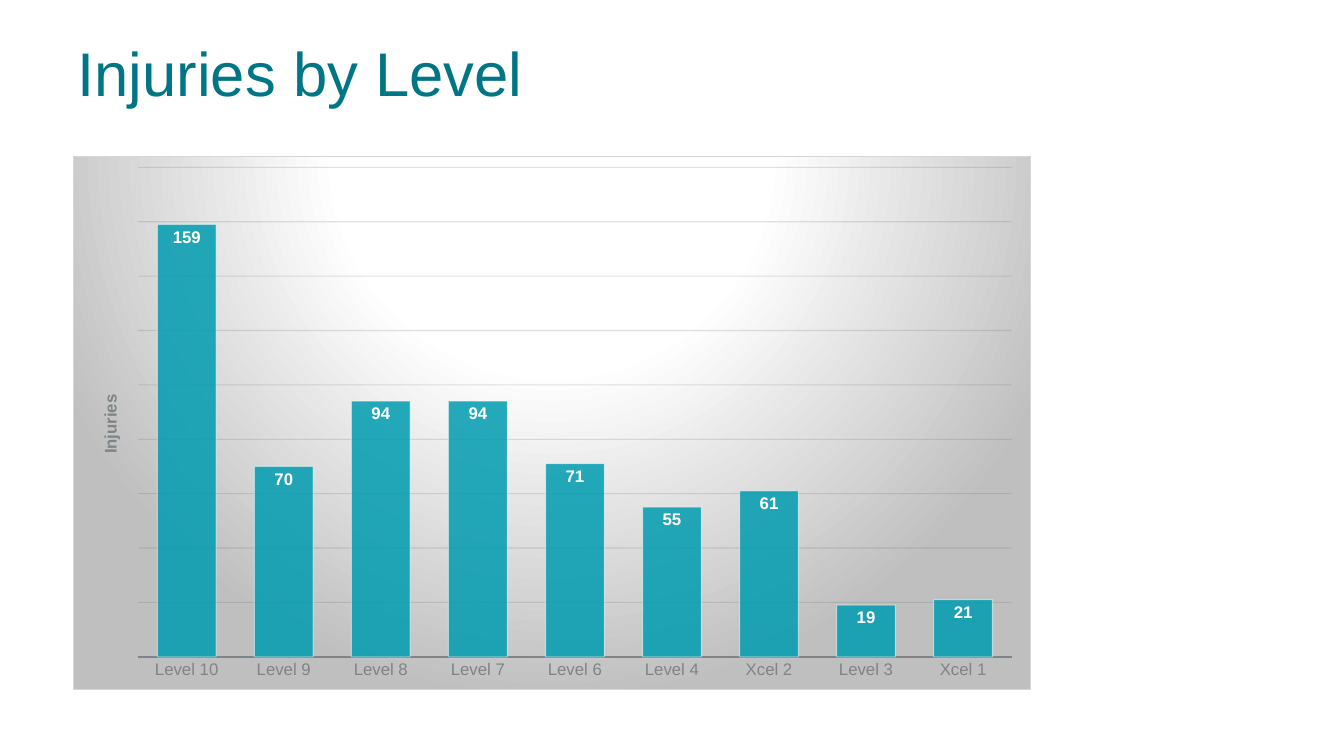
from lxml.etree import SubElement
from pptx import Presentation
from pptx.chart.data import CategoryChartData
from pptx.dml.color import RGBColor
from pptx.enum.chart import XL_CHART_TYPE as ChartType
from pptx.enum.chart import XL_LABEL_POSITION as LabelPosition
from pptx.enum.chart import XL_TICK_LABEL_POSITION as TickLabels
from pptx.enum.chart import XL_TICK_MARK as TickMark
from pptx.enum.text import MSO_ANCHOR
from pptx.oxml import parse_xml
from pptx.oxml.ns import nsdecls, qn
from pptx.util import Inches, Pt

# Content
TITLE = "Injuries by Level"
AXIS_TITLE = "Injuries"
INJURIES = {
    "Level 10": 159, "Level 9": 70, "Level 8": 94, "Level 7": 94, "Level 6": 71,
    "Level 4": 55, "Xcel 2": 61, "Level 3": 19, "Xcel 1": 21,
}

# Style
FONT = "Arial"
TEAL = RGBColor(0x00, 0x75, 0x85)
BAR_TEAL = RGBColor(0x00, 0x9C, 0xB1)
WHITE = RGBColor(0xFF, 0xFF, 0xFF)
TEXT_GREY = RGBColor(0x56, 0x5A, 0x5C)
AXIS_GREY = RGBColor(0x7E, 0x84, 0x87)
GRID_GREY = RGBColor(0x5E, 0x62, 0x65)
BORDER_GREY = RGBColor(0xD4, 0xD6, 0xD7)
EDGE_GREY = RGBColor(0xBF, 0xBF, 0xBF)
BACKDROP_STOPS = [(0, WHITE), (39, WHITE), (100, EDGE_GREY)]


def style_font(font, size, color, bold=False):
    font.name, font.size, font.bold = FONT, Pt(size), bold
    font.color.rgb = color


def style_line(line, color, width):
    line.color.rgb = color
    line.width = Pt(width)


def set_opacity(holder, percent):
    """Set the opacity of the solid fill found directly in holder."""
    color = holder.find(qn("a:solidFill"))[0]
    SubElement(color, qn("a:alpha")).set("val", str(percent * 1000))


def make_layout(x, y, size=None, inner=False):
    """Build a manual chart layout from fractions of the chart area."""
    settings = [("xMode", "edge"), ("yMode", "edge"), ("x", x), ("y", y)]
    if inner:
        settings.insert(0, ("layoutTarget", "inner"))
    if size:
        settings += zip("wh", size)
    layout = parse_xml(f"<c:layout {nsdecls('c')}><c:manualLayout/></c:layout>")
    for name, value in settings:
        SubElement(layout[0], qn(f"c:{name}")).set("val", str(value))
    return layout


def drop_layout(element):
    for layout in element.findall(qn("c:layout")):
        element.remove(layout)


deck = Presentation()
deck.slide_width, deck.slide_height = Inches(13.33), Inches(7.5)
page = deck.slides.add_slide(deck.slide_layouts[6])

# Title
box = page.shapes.add_textbox(Inches(0.67), Inches(0.3), Inches(12), Inches(1.25))
frame = box.text_frame
frame.word_wrap = True
frame.vertical_anchor = MSO_ANCHOR.TOP
frame.text = TITLE
style_font(frame.paragraphs[0].runs[0].font, 44, TEAL)

# Chart
data = CategoryChartData()
data.categories = list(INJURIES)
data.add_series("Series 1", list(INJURIES.values()))
chart = page.shapes.add_chart(
    ChartType.COLUMN_CLUSTERED,
    Inches(0.72), Inches(1.55), Inches(9.51), Inches(5.3), data).chart
chart.has_legend = False
chart.has_title = False
style_font(chart.font, 10, TEXT_GREY)

# Bars and their labels
plot = chart.plots[0]
plot.gap_width = 65
plot.vary_by_categories = False
bars = plot.series[0]
bars.format.fill.solid()
bars.format.fill.fore_color.rgb = BAR_TEAL
style_line(bars.format.line, WHITE, 0.75)
bar_style = bars._element.find(qn("c:spPr"))
set_opacity(bar_style, 85)
set_opacity(bar_style.find(qn("a:ln")), 50)
labels = bars.data_labels
labels.show_value = True
labels.position = LabelPosition.INSIDE_END
style_font(labels.font, 12, WHITE, bold=True)

# Axes
levels = chart.category_axis
levels.major_tick_mark = levels.minor_tick_mark = TickMark.NONE
levels.tick_label_position = TickLabels.NEXT_TO_AXIS
style_font(levels.tick_labels.font, 12, AXIS_GREY)
style_line(levels.format.line, AXIS_GREY, 1.5)

counts = chart.value_axis
counts.visible = False
counts.minimum_scale, counts.maximum_scale, counts.major_unit = 0, 180, 20
counts.has_major_gridlines = True
style_line(counts.major_gridlines.format.line, GRID_GREY, 0.75)
gridlines = counts._element.find(qn("c:majorGridlines"))
set_opacity(gridlines.find(qn("c:spPr")).find(qn("a:ln")), 18)

# Rotated axis title
counts.has_title = True
heading = counts.axis_title.text_frame
heading.text = AXIS_TITLE
style_font(heading.paragraphs[0].runs[0].font, 12, AXIS_GREY, bold=True)
title_element = counts._element.find(qn("c:title"))
title_text = title_element.find(qn("c:tx"))
body = title_text.find(".//" + qn("a:bodyPr"))
body.set("rot", "-5400000")
body.set("vert", "horz")
drop_layout(title_element)
title_text.addnext(make_layout(0.025, 0.44))

# Plot position
chart_element = chart._chartSpace.find(qn("c:chart"))
plot_area = chart_element.find(qn("c:plotArea"))
drop_layout(plot_area)
plot_area.insert(0, make_layout(0.068, 0.02, (0.912, 0.918), inner=True))

# Radial backdrop and border
stops = "".join(
    f'<a:gs pos="{place * 1000}"><a:srgbClr val="{color}"/></a:gs>'
    for place, color in BACKDROP_STOPS)
chart_element.addnext(parse_xml(
    f'<c:spPr {nsdecls("c", "a")}>'
    f'<a:gradFill><a:gsLst>{stops}</a:gsLst><a:path path="circle">'
    '<a:fillToRect l="50000" t="-80000" r="50000" b="180000"/></a:path></a:gradFill>'
    f'<a:ln w="{Pt(0.75)}"><a:solidFill><a:srgbClr val="{BORDER_GREY}"/></a:solidFill></a:ln>'
    '</c:spPr>'))

deck.save("out.pptx")
